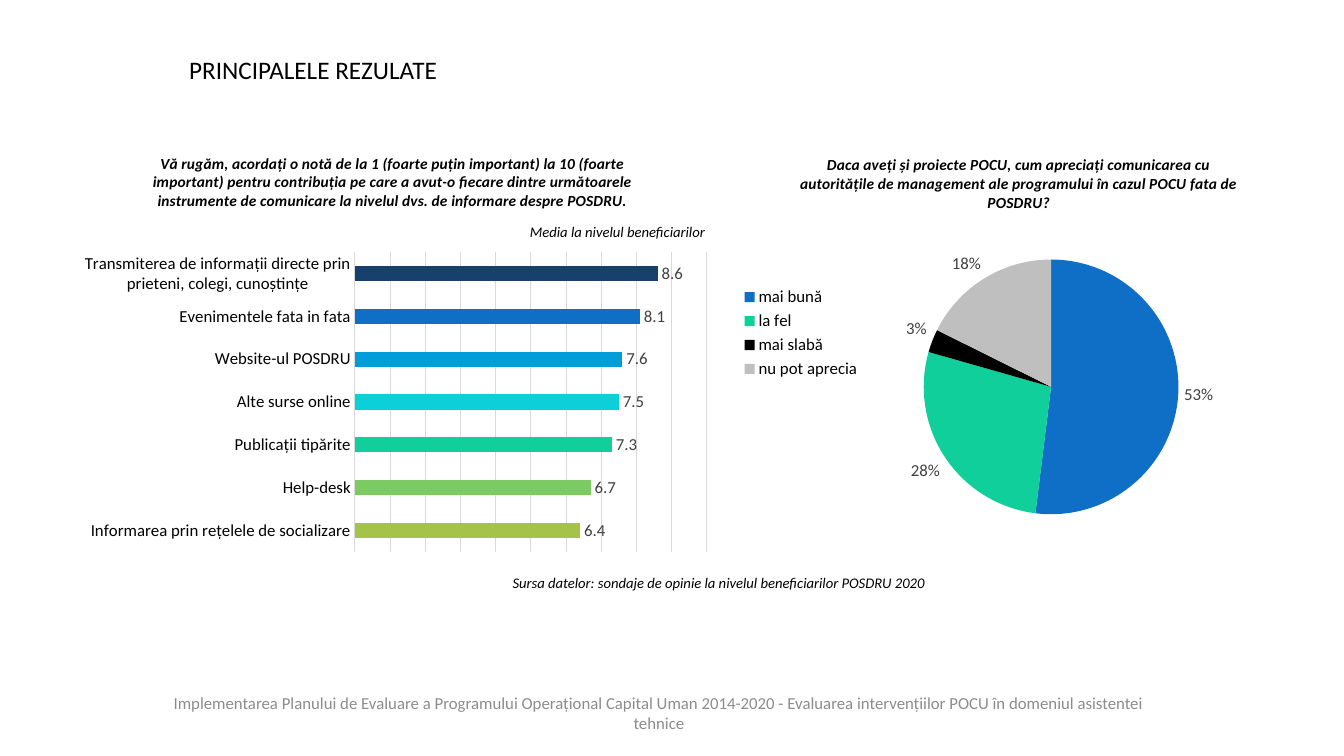
from lxml.etree import SubElement
from pptx import Presentation
from pptx.chart.data import CategoryChartData
from pptx.dml.color import RGBColor
from pptx.enum.chart import XL_CHART_TYPE as ChartType
from pptx.enum.chart import XL_LABEL_POSITION as LabelPosition
from pptx.enum.chart import XL_LEGEND_POSITION as LegendPosition
from pptx.enum.chart import XL_TICK_LABEL_POSITION as TickLabelPosition
from pptx.enum.chart import XL_TICK_MARK as TickMark
from pptx.enum.text import MSO_ANCHOR as Anchor
from pptx.enum.text import MSO_AUTO_SIZE as AutoSize
from pptx.enum.text import PP_ALIGN as Align
from pptx.oxml.ns import qn
from pptx.util import Emu, Pt

FONT = "Calibri"
BLACK, DARK_GRAY, GRAY, LIGHT_GRAY = "000000", "404040", "8C8C8C", "D9D9D9"

HEADING = "PRINCIPALELE REZULATE"
HEADING_BOX = (179, 49, 723, 40)

INSTRUMENTS = {
    "title": "Vă rugăm, acordați o notă de la 1 (foarte puțin important) la 10 "
             "(foarte important) pentru contribuția pe care a avut-o fiecare dintre "
             "următoarele instrumente de comunicare la nivelul dvs. de informare "
             "despre POSDRU.",
    "type": ChartType.BAR_CLUSTERED,
    "box": (54, 134, 676, 480),
    "format": "0.0",
    "points": [
        ("Transmiterea de informații directe prin prieteni, colegi, cunoștințe", 8.6, "17406D"),
        ("Evenimentele fata in fata", 8.1, "0F6FC6"),
        ("Website-ul POSDRU", 7.6, "009DD9"),
        ("Alte surse online", 7.5, "0BD0D9"),
        ("Publicații tipărite", 7.3, "10CF9B"),
        ("Help-desk", 6.7, "7CCA62"),
        ("Informarea prin rețelele de socializare", 6.4, "A5C249"),
    ],
    "plot_box": (301, 118, 352, 300),
    "title_corner": (96, 16),
}
COMPARISON = {
    "title": "Daca aveți și proiecte POCU, cum apreciați comunicarea cu autoritățile "
             "de management ale programului în cazul POCU fata de POSDRU?",
    "type": ChartType.PIE,
    "box": (717, 149, 565, 404),
    "format": "0%",
    "points": [
        ("mai bună", 0.53, "0F6FC6"),
        ("la fel", 0.28, "10CF9B"),
        ("mai slabă", 0.03, "000000"),
        ("nu pot aprecia", 0.18, "BFBFBF"),
    ],
    "plot_box": (207, 110, 255, 256),
    "title_corner": (80, 2),
}
LEGEND_CORNER = (22, 134)

NOTES = [
    ("Sursa datelor: sondaje de opinie la nivelul beneficiarilor POSDRU 2020", (497, 569, 438, 28)),
    ("Media la nivelul beneficiarilor", (311, 218, 404, 28)),
]
FOOTER = ("Implementarea Planului de Evaluare a Programului Operațional Capital Uman "
          "2014-2020 - Evaluarea intervențiilor POCU în domeniul asistentei tehnice")
FOOTER_BOX = (137, 699, 1083, 28)
FOOTER_RIGHT_MARGIN = 49


def px(length):
    return Emu(round(length * 914400 / 100.8))


def color(value):
    return RGBColor.from_string(value)


def style_font(font, size, hex_color=BLACK, bold=False, italic=False):
    font.name, font.size, font.bold, font.italic = FONT, Pt(size), bold, italic
    font.color.rgb = color(hex_color)


def write(text_frame, text, size, align=Align.LEFT, **style):
    paragraph = text_frame.paragraphs[0]
    paragraph.alignment = align
    run = paragraph.add_run()
    run.text = text
    style_font(run.font, size, **style)


def add_text(slide, text, box, size, **style):
    shape = slide.shapes.add_textbox(*map(px, box))
    shape.text_frame.word_wrap = True
    write(shape.text_frame, text, size, **style)
    return shape.text_frame


def set_layout(chart, tag, index, box, chart_box, inner=False):
    parent = next(chart._chartSpace.iter(qn(tag)))
    for old in parent.findall(qn("c:layout")):
        parent.remove(old)
    layout = SubElement(parent, qn("c:layout"))
    parent.insert(index, layout)
    manual = SubElement(layout, qn("c:manualLayout"))
    settings = [("layoutTarget", "inner")] if inner else []
    settings += [("xMode", "edge"), ("yMode", "edge")]
    sizes = (chart_box[2], chart_box[3]) * 2
    settings += [(name, str(round(length / size, 3)))
                 for name, length, size in zip("xywh", box, sizes)]
    for name, value in settings:
        SubElement(manual, qn(f"c:{name}")).set("val", value)


def add_chart(slide, content):
    names, values, colors = zip(*content["points"])
    data = CategoryChartData(number_format=content["format"])
    data.categories = names
    data.add_series("Series 1", values)
    box = content["box"]
    chart = slide.shapes.add_chart(content["type"], *map(px, box), data).chart
    style_font(chart.font, 10)
    chart.has_legend = False
    chart.has_title = True
    chart.chart_title.include_in_layout = False
    write(chart.chart_title.text_frame, content["title"], 11,
          align=Align.CENTER, bold=True, italic=True)
    set_layout(chart, "c:title", 1, content["title_corner"], box)
    set_layout(chart, "c:plotArea", 0, content["plot_box"], box, inner=True)

    plot = chart.plots[0]
    plot.vary_by_categories = content["type"] == ChartType.PIE
    for index, hex_color in enumerate(colors):
        fill = plot.series[0].points[index].format.fill
        fill.solid()
        fill.fore_color.rgb = color(hex_color)
    labels = plot.series[0].data_labels
    labels.show_value = True
    labels.number_format = content["format"]
    labels.number_format_is_linked = False
    labels.position = LabelPosition.OUTSIDE_END
    style_font(labels.font, 12, DARK_GRAY)
    return chart


def style_line(line):
    line.color.rgb = color(LIGHT_GRAY)
    line.width = Pt(0.75)


def style_axes(chart):
    chart.plots[0].gap_width = 182
    categories, scores = chart.category_axis, chart.value_axis
    categories.reverse_order = True
    categories.major_tick_mark = categories.minor_tick_mark = TickMark.NONE
    categories.tick_label_position = TickLabelPosition.NEXT_TO_AXIS
    style_font(categories.tick_labels.font, 12)
    style_line(categories.format.line)
    scores.minimum_scale, scores.maximum_scale, scores.major_unit = 0, 10, 1
    scores.has_major_gridlines = True
    style_line(scores.major_gridlines.format.line)
    scores.visible = False


def add_legend(chart):
    chart.has_legend = True
    chart.legend.position = LegendPosition.LEFT
    chart.legend.include_in_layout = False
    style_font(chart.legend.font, 12)
    set_layout(chart, "c:legend", 1, LEGEND_CORNER, COMPARISON["box"])


def main():
    presentation = Presentation()
    presentation.slide_width, presentation.slide_height = px(1344), px(756)
    slide = presentation.slides.add_slide(presentation.slide_layouts[5])

    title = slide.shapes.title
    title.left, title.top, title.width, title.height = map(px, HEADING_BOX)
    title.text_frame.vertical_anchor = Anchor.TOP
    title.text_frame.auto_size = AutoSize.NONE
    write(title.text_frame, HEADING, 18)

    style_axes(add_chart(slide, INSTRUMENTS))
    add_legend(add_chart(slide, COMPARISON))

    for text, box in NOTES:
        note = add_text(slide, text, box, 10.5, align=Align.RIGHT, italic=True)
        note.auto_size = AutoSize.SHAPE_TO_FIT_TEXT

    footer = add_text(slide, FOOTER, FOOTER_BOX, 12, align=Align.CENTER, hex_color=GRAY)
    footer.vertical_anchor = Anchor.MIDDLE
    footer.margin_right = px(FOOTER_RIGHT_MARGIN)

    presentation.save("out.pptx")


if __name__ == "__main__":
    main()
